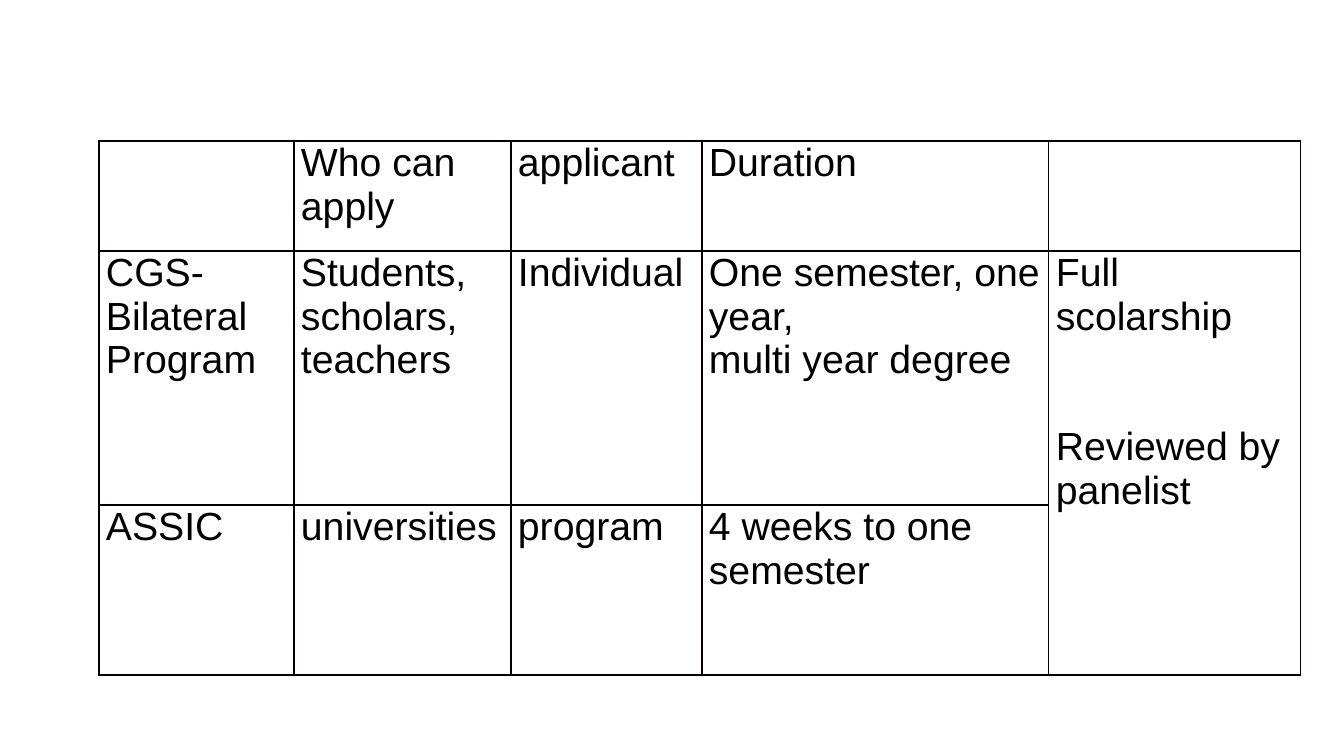
import pptx
import pptx.dml.color
import pptx.oxml
import pptx.oxml.ns
import pptx.util

PX = 914400 / 100.8
INK, LINE = "000000", "080000"
GAP = 62  # points between the two notes in the last column


def px(n):
    return pptx.util.Emu(round(n * PX))


def color(code):
    return pptx.dml.color.RGBColor.from_string(code)


# Slide
deck = pptx.Presentation()
deck.slide_width, deck.slide_height = px(1344), px(756)
slide = deck.slides.add_slide(deck.slide_layouts[6])

# Table content
rows = [
    ["", "Who can apply", "applicant", "Duration", ""],
    ["CGS-Bilateral Program", "Students, scholars,\nteachers", "Individual",
     "One semester, one year,\nmulti year degree",
     "Full scolarship\nReviewed by panelist"],
    ["ASSIC", "universities", "program", "4 weeks to one semester", ""],
]
widths = [195, 217, 191, 347, 252]
heights = [110, 254, 170]

# Table grid
frame = slide.shapes.add_table(len(rows), len(widths), px(99), px(141),
                               px(sum(widths)), px(sum(heights)))
table = frame.table
table.first_row = table.horz_banding = False
for col, width in zip(table.columns, widths):
    col.width = px(width)
for row, height in zip(table.rows, heights):
    row.height = px(height)
table.cell(1, 4).merge(table.cell(2, 4))

# Cells: borders, fill, margins and text
for r, texts in enumerate(rows):
    for c, text in enumerate(texts):
        cell = table.cell(r, c)
        props = cell._tc.get_or_add_tcPr()
        for side in "LRTB":
            props.append(pptx.oxml.parse_xml(
                f'<a:ln{side} {pptx.oxml.ns.nsdecls("a")} w="12700">'
                f'<a:solidFill><a:srgbClr val="{LINE}"/></a:solidFill>'
                f'</a:ln{side}>'))
        cell.fill.background()
        cell.margin_left = cell.margin_right = px(7)
        cell.margin_top = cell.margin_bottom = 0
        if cell.is_spanned:
            continue
        cell.text = text
        for para in cell.text_frame.paragraphs:
            para.font.name = "Arial"
            para.font.size = pptx.util.Pt(28)
            para.font.color.rgb = color(INK)

# Gap above the second note
table.cell(1, 4).text_frame.paragraphs[1].space_before = pptx.util.Pt(GAP)

deck.save("out.pptx")
